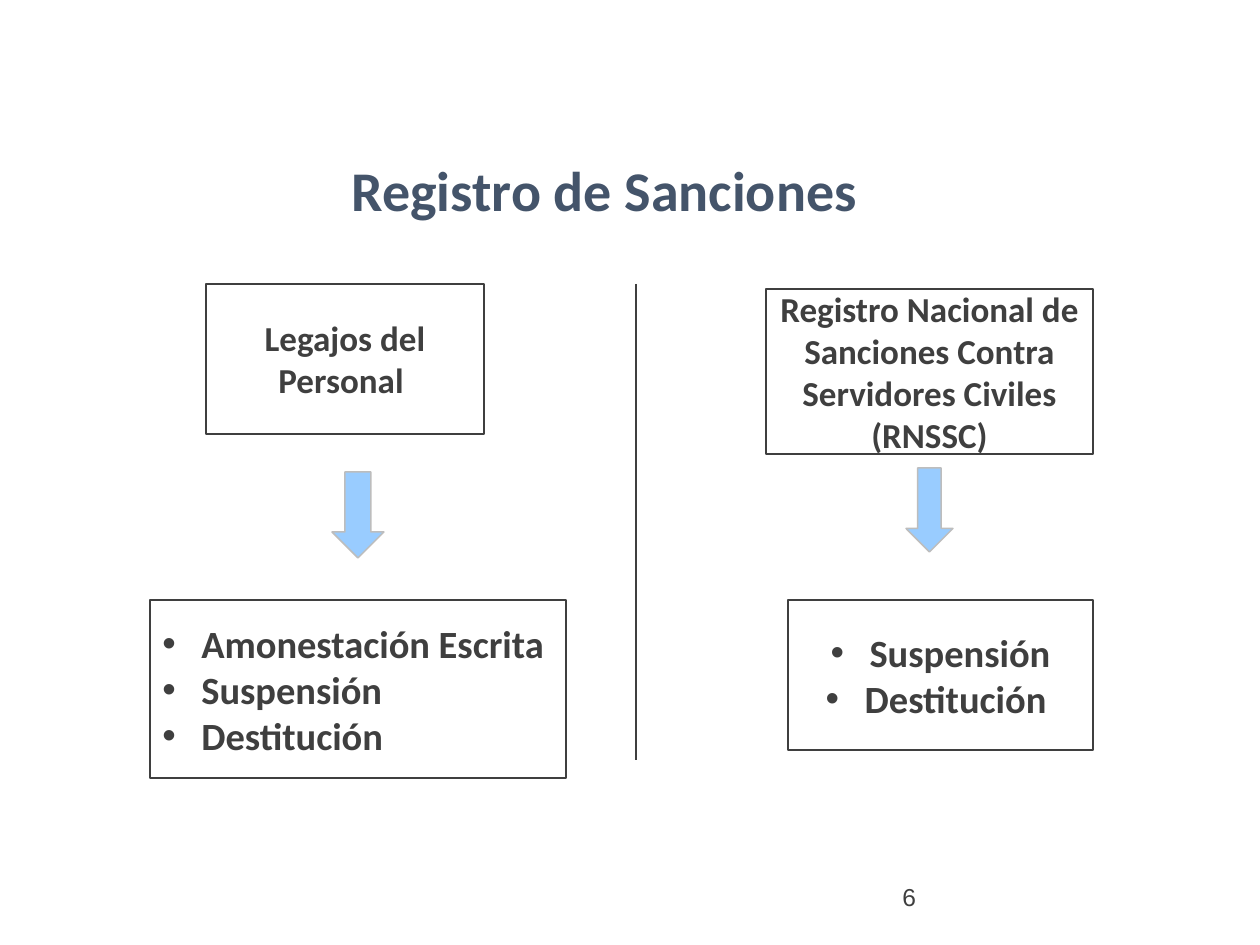
"""Build the slide on where sanctions are registered."""
from lxml import etree
from pptx import Presentation
from pptx.dml.color import RGBColor
from pptx.enum import shapes, text
from pptx.oxml.ns import qn
from pptx.util import Emu, Pt

SCALE = 914400 / 126
COLORS = {"ink": "3F3F3F", "title": "44546A", "paper": "FFFFFF",
          "arrow": "99CCFF", "edge": "BDBDBD"}
CENTER, LEFT = text.PP_ALIGN.CENTER, text.PP_ALIGN.LEFT
MIDDLE, TOP = text.MSO_ANCHOR.MIDDLE, text.MSO_ANCHOR.TOP
INDENT = 39


def emu(*lengths):
    return [Emu(round(length * SCALE)) for length in lengths]


def write(box, lines, size, color="ink", font="Calibri", bold=True,
          align=CENTER, anchor=MIDDLE, bullets=False):
    frame = box.text_frame
    frame.word_wrap = True
    frame.vertical_anchor = anchor
    for index, line in enumerate(lines):
        para = frame.add_paragraph() if index else frame.paragraphs[0]
        para.alignment = align
        if bullets:
            indent = emu(INDENT)[0]
            props = para._p.get_or_add_pPr()
            props.set("marL", str(indent))
            props.set("indent", str(-indent))
            etree.SubElement(props, qn("a:buFont")).set("typeface", "Arial")
            etree.SubElement(props, qn("a:buChar")).set("char", "•")
        span = para.add_run()
        span.text = line
        span.font.name = font
        span.font.size = Pt(size)
        span.font.bold = bold
        span.font.color.rgb = RGBColor.from_string(COLORS[color])


deck = Presentation()
deck.slide_width, deck.slide_height = emu(1260, 945)
page = deck.slides.add_slide(deck.slide_layouts[6])

number = page.shapes.add_textbox(*emu(890, 876, 284, 50))
write(number, ["6"], 14, font="Arial", bold=False, align=LEFT, anchor=TOP)
title = page.shapes.add_textbox(*emu(74, 155, 1061, 69))
write(title, ["Registro de Sanciones"], 32, color="title")

divider = page.shapes.add_connector(shapes.MSO_CONNECTOR.STRAIGHT, *emu(636, 284, 636, 760))
divider.line.color.rgb = RGBColor.from_string(COLORS["ink"])
divider.line.width = Pt(0.75)
etree.SubElement(divider._element.spPr, qn("a:effectLst"))

registries = [
    ((206, 284, 278, 150), ["Legajos del Personal "], 20, CENTER, False),
    ((766, 289, 327, 165),
     ["Registro Nacional de Sanciones Contra Servidores Civiles", "(RNSSC)"],
     20, CENTER, False),
    ((150, 600, 416, 178), ["Amonestación Escrita", "Suspensión", "Destitución"],
     22, LEFT, True),
    ((788, 600, 305, 150), ["Suspensión", "Destitución "], 22, CENTER, True),
]
arrows = [(332, 472, 52, 86), (906, 468, 47, 84)]

outlined = []
for place, lines, size, align, bullets in registries:
    box = page.shapes.add_shape(shapes.MSO_SHAPE.RECTANGLE, *emu(*place))
    write(box, lines, size, align=align, bullets=bullets)
    outlined.append((box, "paper", "ink"))
for place in arrows:
    arrow = page.shapes.add_shape(shapes.MSO_SHAPE.DOWN_ARROW, *emu(*place))
    outlined.append((arrow, "arrow", "edge"))

for shape, fill, edge in outlined:
    shape.shadow.inherit = False
    shape.fill.solid()
    shape.fill.fore_color.rgb = RGBColor.from_string(COLORS[fill])
    shape.line.color.rgb = RGBColor.from_string(COLORS[edge])
    shape.line.width = Pt(0.85)

deck.save("out.pptx")
